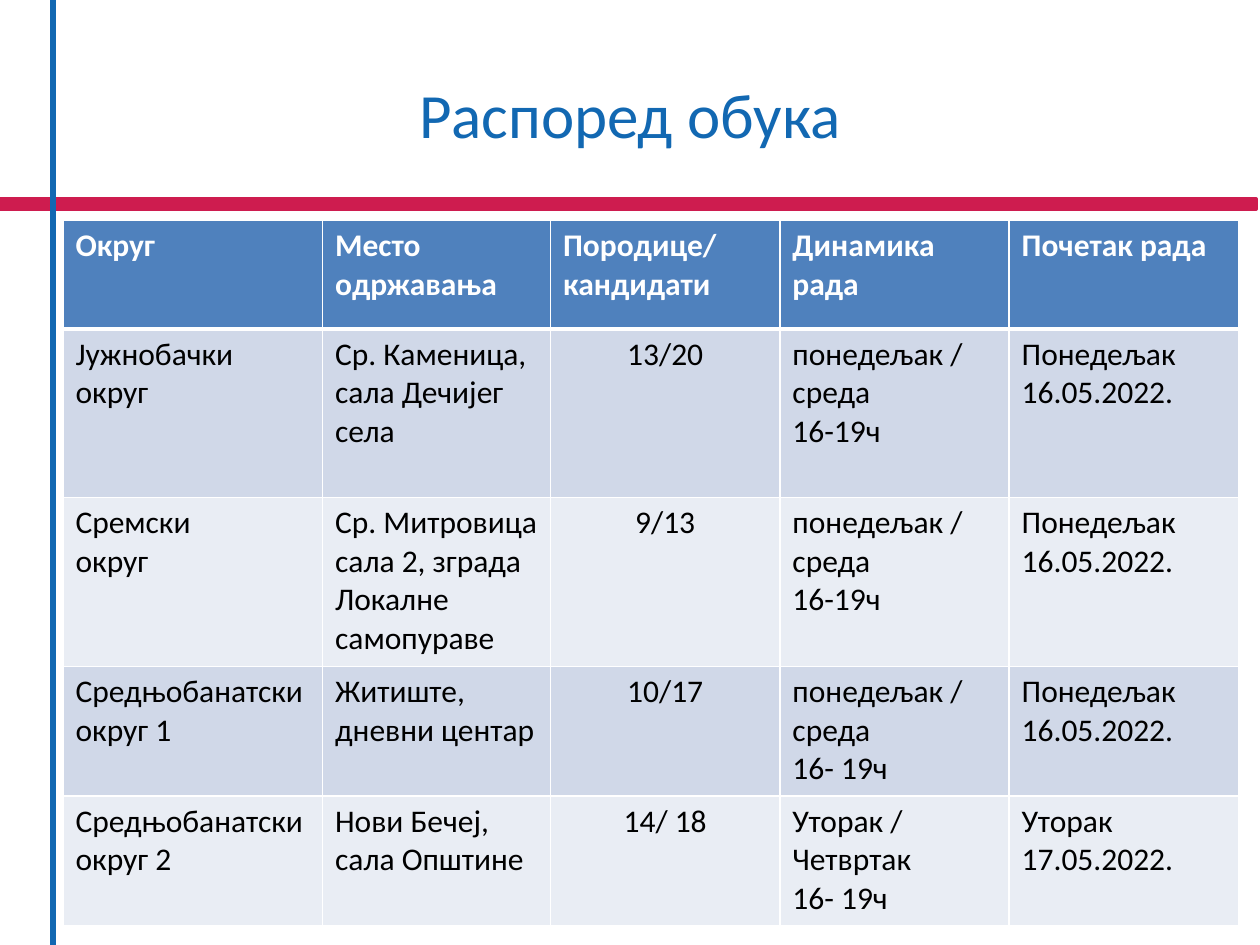
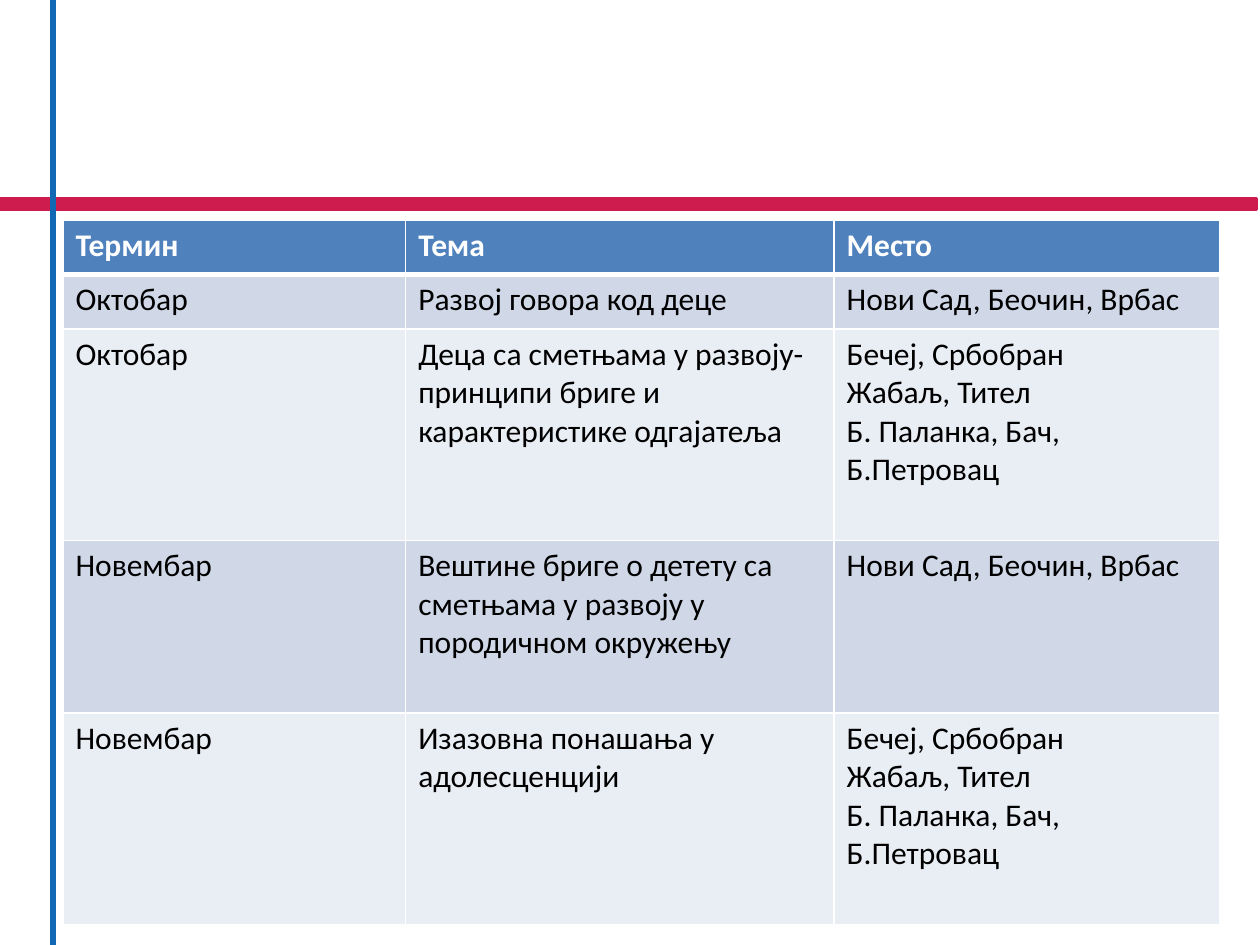
from dataclasses import dataclass

from lxml.etree import SubElement
from pptx import Presentation
from pptx.dml.color import RGBColor as Rgb
from pptx.enum.shapes import MSO_CONNECTOR as Connector, MSO_SHAPE as Shape
from pptx.enum.text import MSO_ANCHOR as Anchor, PP_ALIGN as Align
from pptx.oxml.ns import qn
from pptx.util import Inches, Pt

# Content: "\n" separates the paragraphs of a cell
SCHEDULE = {
    "title": "Распоред обука",
    "columns": [2.06, 1.81, 1.82, 1.82, 1.82],
    "rows": [0.86, 1.34, 1.34, 1.03, 1.03],
    "centred": {2},
    "cells": [
        ("Округ", "Место одржавања", "Породице/\nкандидати", "Динамика рада", "Почетак рада"),
        ("Јужнобачки округ", "Ср. Каменица,\nсала Дечијег села", "13/20",
         "понедељак / среда\n16-19ч", "Понедељак 16.05.2022."),
        ("Сремски\nокруг", "Ср. Митровица\nсала 2, зграда Локалне самопураве", "9/13",
         "понедељак / среда\n16-19ч", "Понедељак\n16.05.2022."),
        ("Средњобанатски округ 1", "Житиште,\nдневни центар", "10/17",
         "понедељак / среда\n16- 19ч", "Понедељак\n16.05.2022."),
        ("Средњобанатски округ 2", "Нови Бечеј,\nсала Општине", "14/ 18",
         "Уторак /\nЧетвртак\n16- 19ч", "Уторак\n17.05.2022."),
    ],
}

NORTH_TOWNS = "Нови Сад, Беочин, Врбас"
OTHER_TOWNS = "Бечеј, Србобран\nЖабаљ, Тител\nБ. Паланка, Бач, Б.Петровац"
TOPICS = {
    "title": None,
    "columns": [2.72, 3.4, 3.06],
    "rows": [0.43, 0.43, 1.68, 1.37, 1.68],
    "centred": set(),
    "cells": [
        ("Термин", "Тема", "Место"),
        ("Октобар", "Развој говора код деце", NORTH_TOWNS),
        ("Октобар", "Деца са сметњама у развоју- принципи бриге и карактеристике одгајатеља",
         OTHER_TOWNS),
        ("Новембар", "Вештине бриге о детету са сметњама у развоју у породичном окружењу",
         NORTH_TOWNS),
        ("Новембар", "Изазовна понашања у адолесценцији", OTHER_TOWNS),
    ],
}


@dataclass(frozen=True)
class Theme:
    font: str = "Calibri"
    title_size: int = 36
    table_size: int = 18
    blue: str = "1268B2"
    red: str = "CE1C4F"
    white: str = "FFFFFF"
    black: str = "000000"
    header: str = "4F81BD"
    stripes: tuple = ("D0D8E8", "E9EDF4")


THEME = Theme()
TITLE_ONLY, BLANK = 5, 6


def rgb(code):
    return Rgb.from_string(code)


def style_text(paragraph, size, color, align, bold=False):
    paragraph.alignment = align
    for run in paragraph.runs:
        run.font.name = THEME.font
        run.font.size = Pt(size)
        run.font.bold = bold
        run.font.color.rgb = rgb(color)


# Shared frame: red band and blue vertical line
def add_frame(slide, height):
    band = slide.shapes.add_shape(
        Shape.RECTANGLE, Inches(-0.03), Inches(1.58), Inches(10), Inches(0.08))
    band.shadow.inherit = False
    band.fill.solid()
    band.fill.fore_color.rgb = rgb(THEME.red)
    band.line.color.rgb = rgb(THEME.red)
    band.line.width = Pt(2)

    margin_line = slide.shapes.add_connector(
        Connector.STRAIGHT, Inches(0.42), 0, Inches(0.42), height)
    margin_line.line.color.rgb = rgb(THEME.blue)
    margin_line.line.width = Pt(3)
    SubElement(margin_line._element.spPr, qn("a:effectLst"))


def add_title(slide, text):
    title = slide.shapes.title
    title.left, title.top = Inches(0.5), Inches(0.3)
    title.width, title.height = Inches(9), Inches(1.2)
    title.text_frame.text = text
    title.text_frame.vertical_anchor = Anchor.MIDDLE
    style_text(title.text_frame.paragraphs[0], THEME.title_size, THEME.blue, Align.CENTER)


# Table
def add_borders(cell, top, bottom):
    properties = cell._tc.get_or_add_tcPr()
    for side, width in (("L", 1), ("R", 1), ("T", top), ("B", bottom)):
        border = SubElement(properties, qn(f"a:ln{side}"), w=str(Pt(width)))
        fill = SubElement(border, qn("a:solidFill"))
        SubElement(fill, qn("a:srgbClr"), val=THEME.white)


def add_table(slide, content):
    columns, rows = content["columns"], content["rows"]
    table = slide.shapes.add_table(
        len(rows), len(columns), Inches(0.5), Inches(1.75),
        Inches(sum(columns)), Inches(sum(rows))).table
    for column, width in zip(table.columns, columns):
        column.width = Inches(width)
    for row, height in zip(table.rows, rows):
        row.height = Inches(height)

    for row_index, texts in enumerate(content["cells"]):
        is_header = row_index == 0
        fill = THEME.header if is_header else THEME.stripes[(row_index - 1) % 2]
        color = THEME.white if is_header else THEME.black
        for column_index, text in enumerate(texts):
            cell = table.cell(row_index, column_index)
            add_borders(cell, top=3 if row_index == 1 else 1, bottom=3 if is_header else 1)
            cell.fill.solid()
            cell.fill.fore_color.rgb = rgb(fill)
            cell.text_frame.text = text
            centred = column_index in content["centred"] and not is_header
            for paragraph in cell.text_frame.paragraphs:
                style_text(paragraph, THEME.table_size, color,
                           Align.CENTER if centred else Align.LEFT, bold=is_header)


def main():
    presentation = Presentation()
    presentation.slide_width, presentation.slide_height = Inches(10), Inches(7.5)
    for content in (SCHEDULE, TOPICS):
        layout = TITLE_ONLY if content["title"] else BLANK
        slide = presentation.slides.add_slide(presentation.slide_layouts[layout])
        add_frame(slide, presentation.slide_height)
        if content["title"]:
            add_title(slide, content["title"])
        add_table(slide, content)
    presentation.save("out.pptx")


if __name__ == "__main__":
    main()
